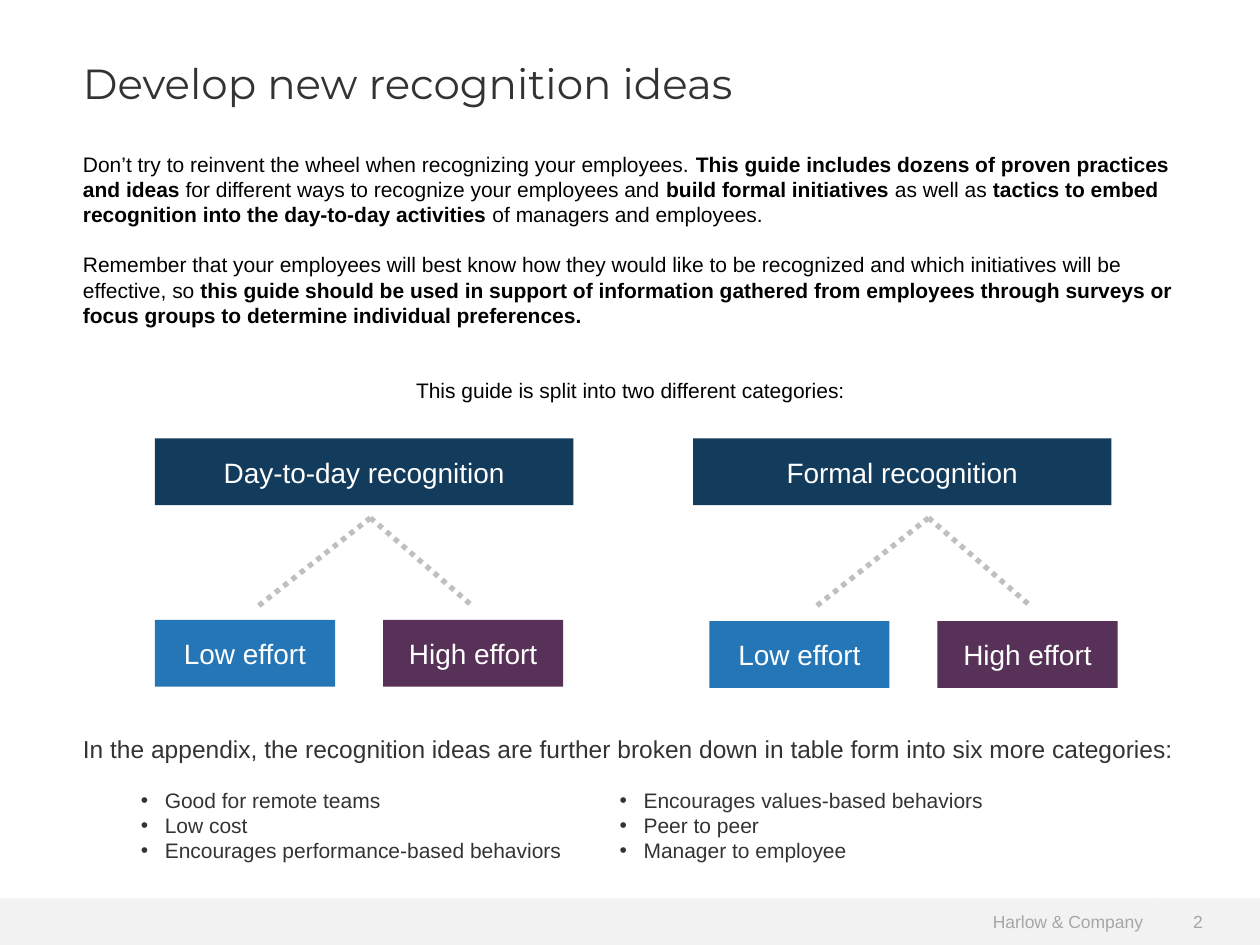
from lxml.etree import SubElement
from pptx import Presentation
from pptx.dml.color import RGBColor
from pptx.enum.dml import MSO_LINE_DASH_STYLE as Dash
from pptx.enum.shapes import MSO_CONNECTOR as Connector, MSO_SHAPE as Shape
from pptx.enum.text import MSO_ANCHOR as Anchor, PP_ALIGN as Align
from pptx.oxml.ns import qn
from pptx.util import Inches, Pt

TITLE = "Develop new recognition ideas"
INTRO = [
    (0, Align.LEFT, [
        ("Don’t try to reinvent the wheel when recognizing your employees. ", False),
        ("This guide includes dozens of proven practices and ideas ", True),
        ("for different ways to recognize your employees and ", False),
        ("build formal initiatives", True),
        (" as well as ", False),
        ("tactics to embed recognition into the day-to-day activities ", True),
        ("of managers and employees.", False),
    ]),
    (14.4, Align.LEFT, [
        ("Remember that your employees will best know how they would like to be recognized "
         "and which initiatives will be effective, so ", False),
        ("this guide should be used in support of information gathered from employees "
         "through surveys or focus groups to determine individual preferences.", True),
    ]),
    (28.8, Align.CENTER, [("This guide is split into two different categories:", False)]),
]
CATEGORIES = [
    {"name": "Day-to-day recognition", "left": 1.23, "apex": 2.94, "effort": (1.23, 4.92)},
    {"name": "Formal recognition", "left": 5.5, "apex": 7.37, "effort": (5.63, 4.93)},
]
EFFORTS = [("Low effort", "2576B7", -0.89), ("High effort", "573158", 0.81)]
EFFORT_STEP = 1.81
APPENDIX = ("In the appendix, the recognition ideas are further broken down "
            "in table form into six more categories:")
BULLETS = [
    (0.63, ["Good for remote teams", "Low cost", "Encourages performance-based behaviors"]),
    (4.43, ["Encourages values-based behaviors", "Peer to peer", "Manager to employee"]),
]
FOOTER = [("Harlow & Company", 0, 9.17, Align.RIGHT, 0.1), ("2", 9.17, 0.83, Align.LEFT, 0.3)]
NAVY, DARK, GRAY, BAND, DOTS = "133B5C", "333333", "A6A6A6", "F2F2F2", "BFBFBF"


def rgb(color):
    """Turn a hex string into a colour."""
    return RGBColor.from_string(color)


def style(paragraph, size, color, font="Arial"):
    """Set the font of every run in a paragraph."""
    for run in paragraph.runs:
        run.font.size = Pt(size)
        run.font.name = font
        run.font.color.rgb = rgb(color)


def add_text(slide, box, lines, size, color, font="Arial"):
    """Add a wrapping text box with one paragraph per line."""
    frame = slide.shapes.add_textbox(*map(Inches, box)).text_frame
    frame.word_wrap = True
    frame.text = "\n".join(lines)
    for paragraph in frame.paragraphs:
        style(paragraph, size, color, font)
    return frame


def add_box(slide, box, text, fill, size=16, color="FFFFFF", align=Align.CENTER, inset=0.16):
    """Add a filled rectangle with a single line of text."""
    shape = slide.shapes.add_shape(Shape.RECTANGLE, *map(Inches, box))
    shape.shadow.inherit = False
    shape.fill.solid()
    shape.fill.fore_color.rgb = rgb(fill)
    shape.line.fill.background()
    frame = shape.text_frame
    frame.text = text
    frame.word_wrap = True
    frame.vertical_anchor = Anchor.MIDDLE
    frame.margin_left = frame.margin_right = Inches(inset)
    frame.paragraphs[0].alignment = align
    style(frame.paragraphs[0], size, color)


def add_branch(slide, start, end):
    """Add a dotted line between two points."""
    line = slide.shapes.add_connector(Connector.STRAIGHT, *map(Inches, start + end))
    line.line.color.rgb = rgb(DOTS)
    line.line.width = Pt(3)
    line.line.dash_style = Dash.ROUND_DOT
    SubElement(line._element.spPr, qn("a:effectLst"))


def add_intro(slide):
    """Add the introduction with its bold passages."""
    frame = add_text(slide, (0.56, 1.15, 8.89, 2.12), [""], 12, "000000")
    for index, (gap, align, runs) in enumerate(INTRO):
        paragraph = frame.add_paragraph() if index else frame.paragraphs[0]
        paragraph.alignment = align
        paragraph.space_before = Pt(gap)
        for text, bold in runs:
            run = paragraph.add_run()
            run.text = text
            run.font.bold = bold
        style(paragraph, 12, "000000")


def add_category(slide, category):
    """Add a category box with its two effort levels."""
    add_box(slide, (category["left"], 3.48, 3.32, 0.53), category["name"], NAVY)
    left, top = category["effort"]
    apex = category["apex"]
    for index, (name, fill, reach) in enumerate(EFFORTS):
        add_branch(slide, (apex, 4.11), (apex + reach, 4.81))
        add_box(slide, (left + index * EFFORT_STEP, top, 1.43, 0.53), name, fill)


def add_bullets(slide, left, items):
    """Add a bulleted list."""
    frame = add_text(slide, (left, 6.2, 5, 0.71), items, 12, DARK)
    for paragraph in frame.paragraphs:
        properties = paragraph._p.get_or_add_pPr()
        properties.set("marL", str(Inches(0.58)))
        properties.set("indent", str(Inches(-0.19)))
        SubElement(properties, qn("a:buFont"), typeface="Arial")
        SubElement(properties, qn("a:buChar"), char="•")


def main():
    """Build the slide and save it."""
    presentation = Presentation()
    presentation.slide_width, presentation.slide_height = Inches(10), Inches(7.5)
    slide = presentation.slides.add_slide(presentation.slide_layouts[6])
    for text, left, width, align, inset in FOOTER:
        add_box(slide, (left, 7.13, width, 0.37), text, BAND, 10, GRAY, align, inset)
    add_text(slide, (0.56, 0.41, 8.89, 0.94), [TITLE], 24, DARK, "Montserrat")
    add_intro(slide)
    for category in CATEGORIES:
        add_category(slide, category)
    add_text(slide, (0.56, 5.78, 9.04, 0.34), [APPENDIX], 14, DARK)
    for left, items in BULLETS:
        add_bullets(slide, left, items)
    presentation.save("out.pptx")


if __name__ == "__main__":
    main()
